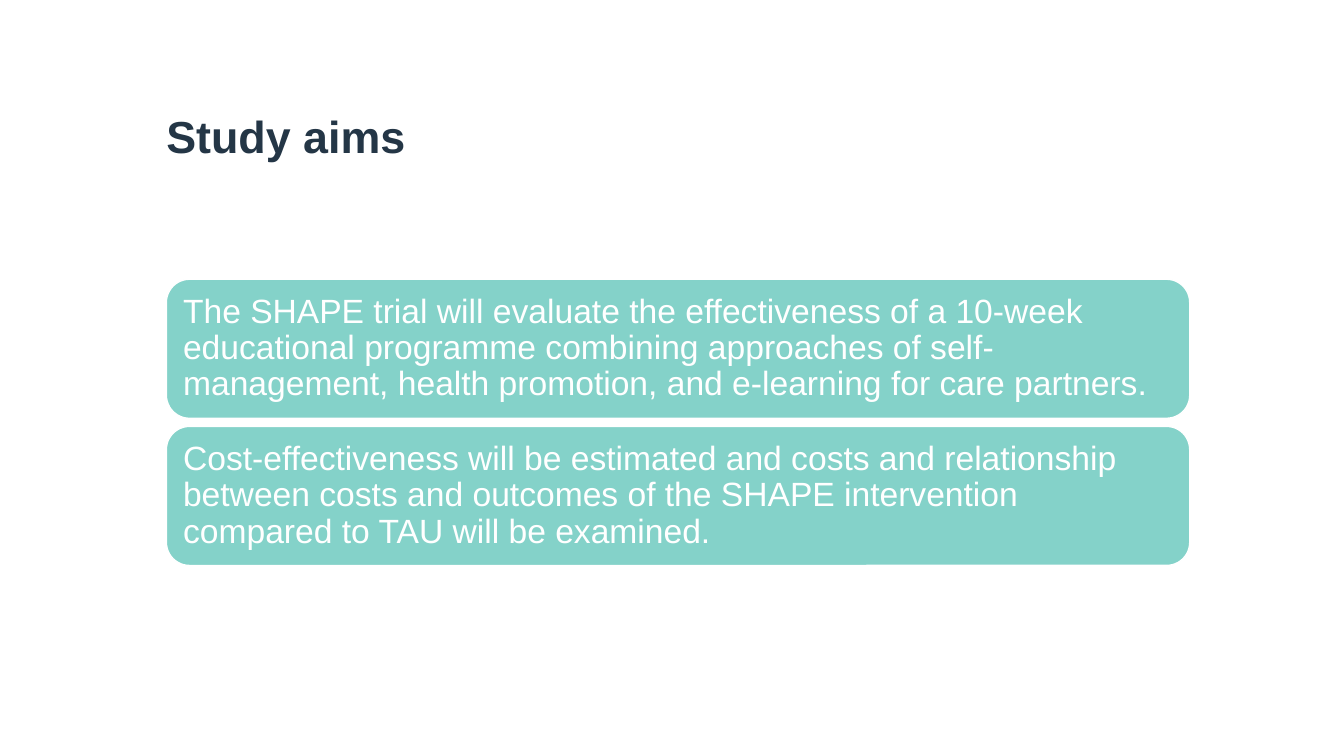
"""Build the study aims slide."""
from dataclasses import dataclass

import pptx
import pptx.dml.color
import pptx.enum.shapes
import pptx.enum.text
import pptx.slide
import pptx.text.text
import pptx.util

EMU_PER_PX = 9144
FONT = "Arial"
NAVY = pptx.dml.color.RGBColor(0x24, 0x36, 0x46)
TEAL = pptx.dml.color.RGBColor(0x84, 0xD2, 0xC9)
WHITE = pptx.dml.color.RGBColor(0xFF, 0xFF, 0xFF)

LEFT, WIDTH = 165, 1015
AIM_TOP, AIM_HEIGHT, AIM_PITCH = 277, 138, 146


@dataclass(frozen=True)
class TextStyle:
    size: int
    color: pptx.dml.color.RGBColor
    bold: bool
    inset: int
    anchor: pptx.enum.text.MSO_ANCHOR


HEADING = TextStyle(32, NAVY, True, 0, pptx.enum.text.MSO_ANCHOR.TOP)
AIM = TextStyle(24, WHITE, False, 10, pptx.enum.text.MSO_ANCHOR.MIDDLE)

AIMS = (
    "The SHAPE trial will evaluate the effectiveness of a 10-week educational programme "
    "combining approaches of self-management, health promotion, and e-learning for care partners.",
    "Cost-effectiveness will be estimated and costs and relationship between costs and outcomes "
    "of the SHAPE intervention compared to TAU will be examined.",
)


def px(length: int) -> pptx.util.Emu:
    return pptx.util.Emu(length * EMU_PER_PX)


def write(frame: pptx.text.text.TextFrame, text: str, style: TextStyle) -> None:
    frame.text = text
    frame.word_wrap = True
    frame.vertical_anchor = style.anchor
    frame.margin_left = frame.margin_right = px(style.inset)
    frame.margin_top = frame.margin_bottom = px(style.inset)
    paragraph = frame.paragraphs[0]
    paragraph.alignment = pptx.enum.text.PP_ALIGN.LEFT
    paragraph.line_spacing = 0.9
    font = paragraph.runs[0].font
    font.name = FONT
    font.size = pptx.util.Pt(style.size)
    font.bold = style.bold
    font.color.rgb = style.color


def add_heading(slide: pptx.slide.Slide, text: str) -> None:
    heading = slide.shapes.add_textbox(px(LEFT), px(114), px(WIDTH), px(133))
    write(heading.text_frame, text, HEADING)


def add_aim(slide: pptx.slide.Slide, text: str, top: int) -> None:
    panel = slide.shapes.add_shape(
        pptx.enum.shapes.MSO_SHAPE.ROUNDED_RECTANGLE,
        px(LEFT), px(top), px(WIDTH), px(AIM_HEIGHT),
    )
    panel.shadow.inherit = False
    panel.fill.solid()
    panel.fill.fore_color.rgb = TEAL
    panel.line.color.rgb = WHITE
    panel.line.width = pptx.util.Pt(1)
    write(panel.text_frame, text, AIM)


def main() -> None:
    deck = pptx.Presentation()
    deck.slide_width, deck.slide_height = px(1333), px(750)
    slide = deck.slides.add_slide(deck.slide_layouts[6])
    add_heading(slide, "Study aims")
    for row, aim in enumerate(AIMS):
        add_aim(slide, aim, AIM_TOP + row * AIM_PITCH)
    deck.save("out.pptx")


if __name__ == "__main__":
    main()
